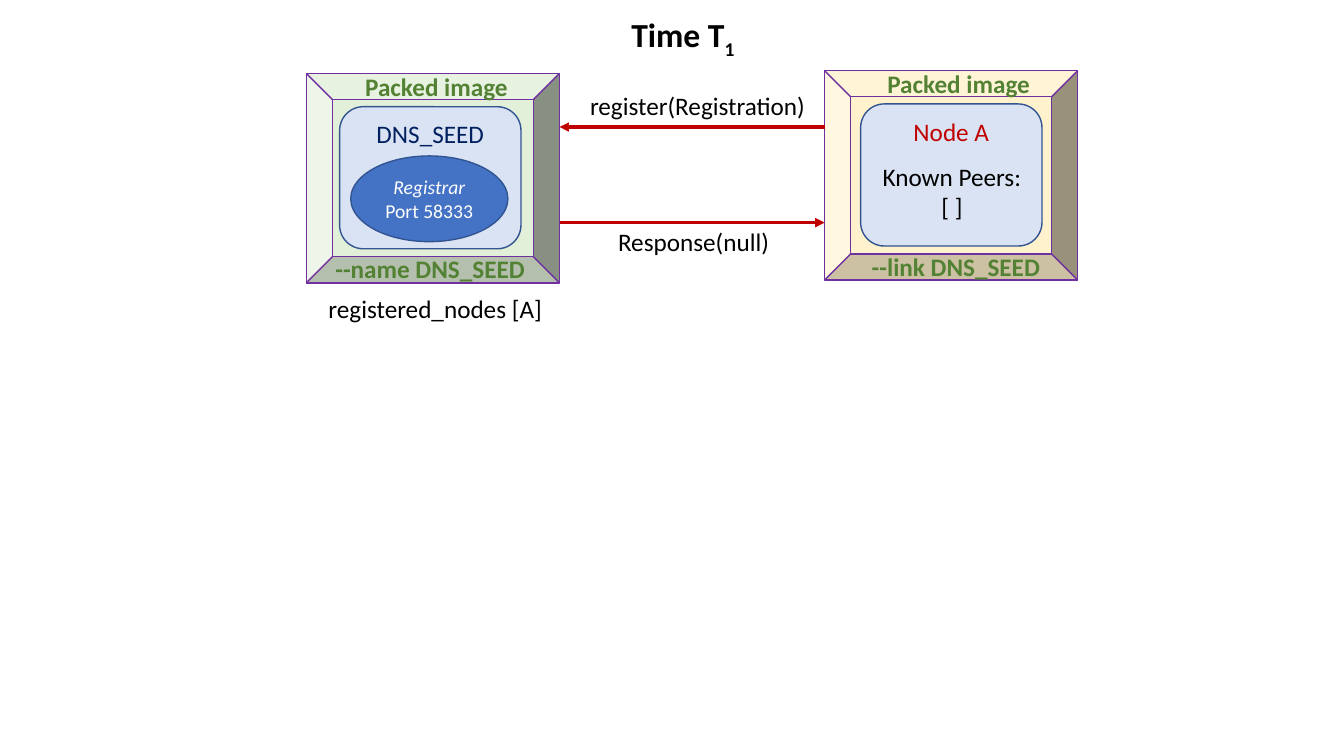
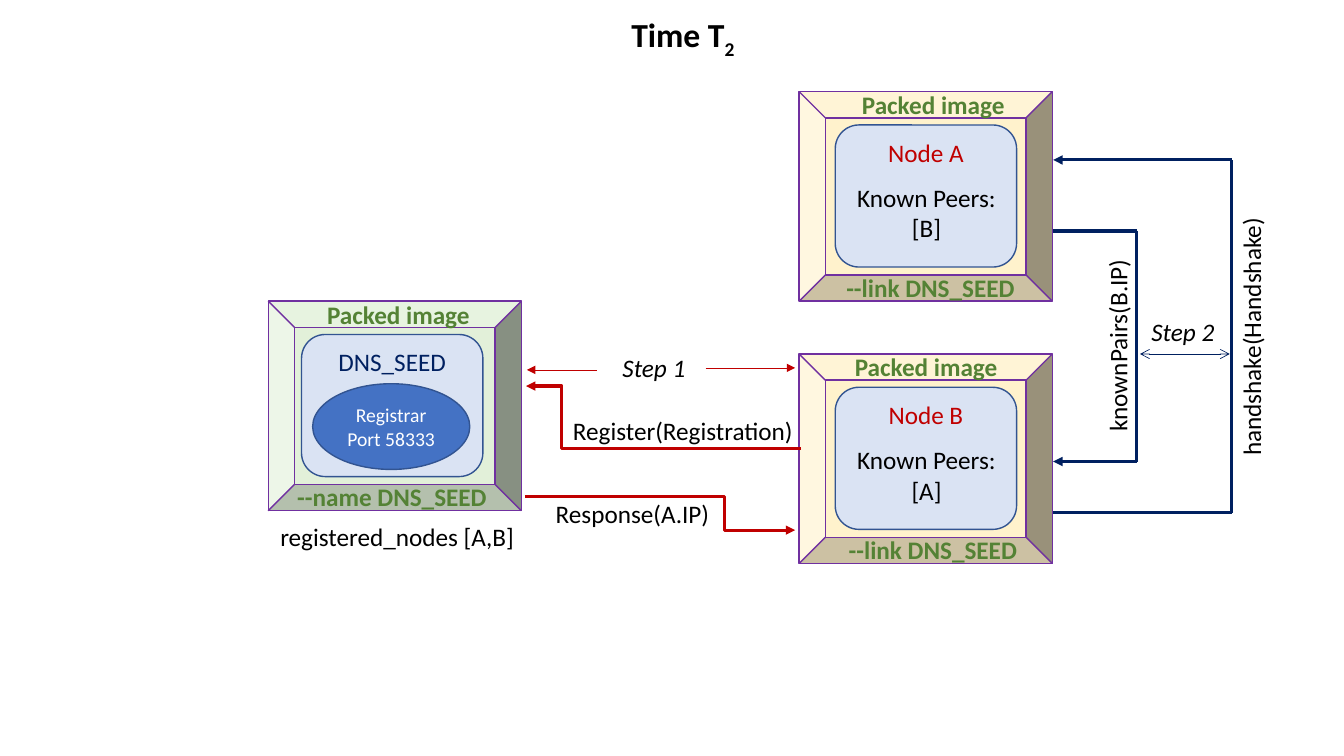
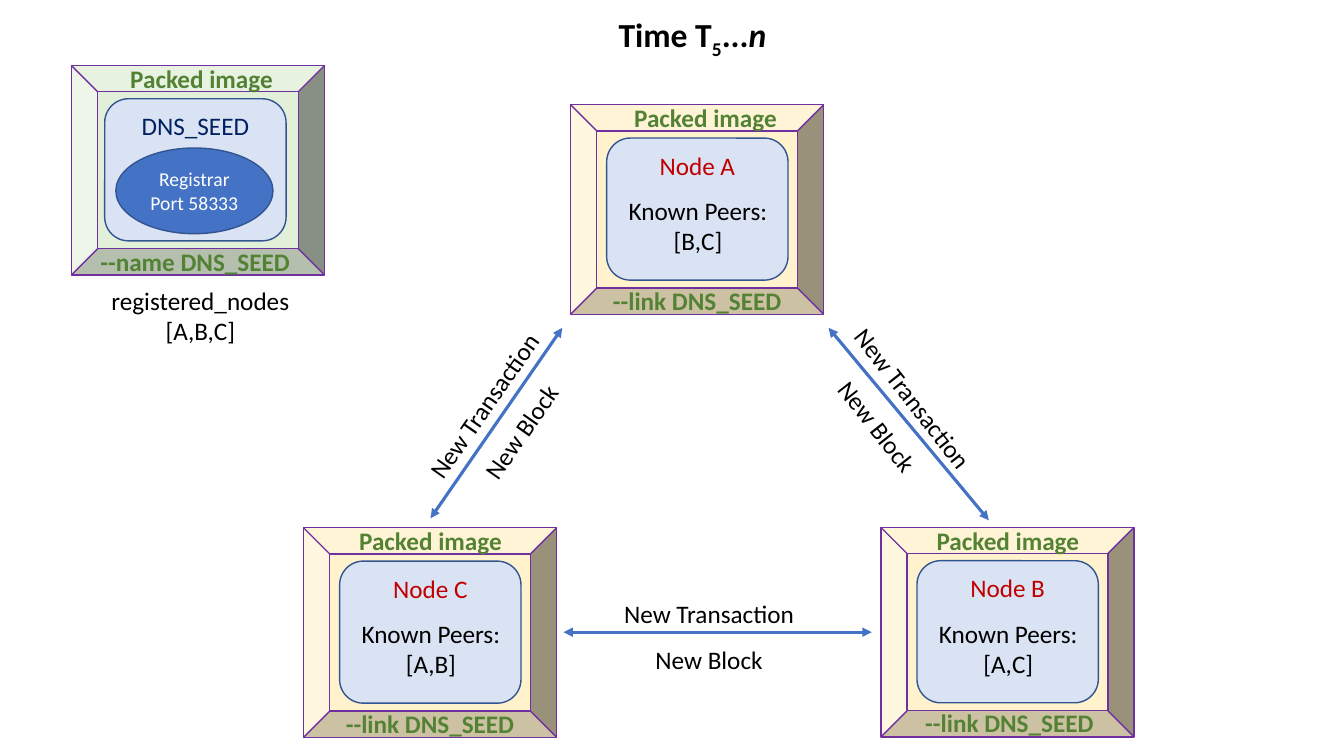
import lxml.etree
import pptx
import pptx.dml.color
import pptx.enum.shapes
import pptx.enum.text
import pptx.oxml.ns
import pptx.util

Cm, Pt = pptx.util.Cm, pptx.util.Pt
MSO = pptx.enum.shapes.MSO_SHAPE
CONN = pptx.enum.shapes.MSO_CONNECTOR
ANCHOR = pptx.enum.text.MSO_ANCHOR
CENTER = pptx.enum.text.PP_ALIGN.CENTER
rgb = pptx.dml.color.RGBColor.from_string
qn = pptx.oxml.ns.qn

FONT = "Calibri"
BLACK, WHITE, RED, NAVY, BLUE = "000000", "FFFFFF", "C00000", "002060", "4472C4"
GREEN, PURPLE, EDGE = "548235", "7030A0", "325491"
CREAM, MINT, PALE = "FFF2CC", "E2F0D9", "DAE3F3"

BOX_W, BOX_H = 6.38, 5.28
INNER_W, INNER_H = 4.57, 3.58
LABEL_H = 1.02
TAG = dict(bold=True, color=GREEN)
PAIR = dict(spacing=1.5)
PAIR_TEXT = "New Transaction\nNew Block"

# Nodes: name, peers, left, top, centre of upper tag, centre of lower tag.
# Lines: points, colour, width, head, tail, bend (share of an elbow's width).
# Labels: text, centre, top, width, rotation, format.
SLIDES = [
    dict(
        title=("1", ""), title_x=17.21,
        seed=(7.72, 1.85), registered="[A]", registrar_italic=True,
        nodes=[("A", "[ ]", 20.78, 1.78, 3.38, 3.31)],
        lines=[
            ([(20.78, 3.2), (14.1, 3.2)], RED, 2.25, None, "triangle", None),
            ([(14.1, 5.61), (20.78, 5.61)], RED, 2.25, None, "triangle", None),
        ],
        labels=[
            ("register(Registration)", 17.58, 2.16, 6, 0, {}),
            ("Response(null)", 17.48, 5.59, 4.4, 0, {}),
        ],
    ),
    dict(
        title=("2", ""), title_x=17.21,
        seed=(6.76, 7.59), registered="[A,B]", registrar_italic=False,
        nodes=[
            ("A", "[B]", 20.14, 2.31, 3.38, 3.31),
            ("B", "[A]", 20.14, 8.92, 3.2, 3.37),
        ],
        lines=[
            ([(17.78, 9.27), (20.04, 9.27)], RED, 0.5, None, "triangle", None),
            ([(15.04, 9.32), (13.28, 9.32)], RED, 0.5, None, "triangle", None),
            ([(26.54, 12.92), (31.04, 12.92), (31.04, 4.03), (26.54, 4.03)],
             NAVY, 2.25, None, "triangle", None),
            ([(26.54, 5.82), (28.65, 5.82), (28.65, 11.63), (26.54, 11.63)],
             NAVY, 2.25, None, "triangle", None),
            ([(20.19, 11.3), (13.26, 9.73)], RED, 2.25, None, "triangle", 0.87),
            ([(13.23, 12.52), (20.04, 13.36)], RED, 2.25, None, "triangle", 0.74),
            ([(28.73, 8.92), (30.99, 8.92)], NAVY, 0.5, "arrow", "arrow", None),
        ],
        labels=[
            ("Step 1", 16.48, 8.76, 2.13, 0, dict(italic=True)),
            ("Step 2", 29.81, 7.85, 2.13, 0, dict(italic=True)),
            ("handshake(Handshake)", 31.53, 7.98, 6.73, 270, {}),
            ("knownPairs(B.IP)", 28.16, 8.2, 4.9, 270, {}),
            ("Register(Registration)", 17.21, 10.34, 6.12, 0, {}),
            ("Response(A.IP)", 15.94, 12.42, 4.4, 0, {}),
        ],
    ),
    dict(
        title=("5", "n"), title_x=17.45,
        seed=(1.8, 1.65), registered="[A,B,C]", registrar_italic=False,
        nodes=[
            ("A", "[B,C]", 14.38, 2.64, 3.4, 3.19),
            ("B", "[A,C]", 22.2, 13.29, 3.2, 3.24),
            ("C", "[A,B]", 7.65, 13.3, 3.2, 3.19),
        ],
        lines=[
            ([(14.17, 8.26), (10.85, 13.06)], BLUE, 2.25, "triangle", "triangle", None),
            ([(20.88, 8.26), (24.92, 13.11)], BLUE, 2.25, "triangle", "triangle", None),
            ([(21.97, 15.93), (14.2, 15.93)], BLUE, 2.25, "triangle", "triangle", None),
        ],
        labels=[
            (PAIR_TEXT, 12.46, 9.19, 4.85, 305, PAIR),
            (PAIR_TEXT, 22.75, 9.02, 4.85, 51.9, PAIR),
            (PAIR_TEXT, 17.87, 14.58, 4.85, 0, PAIR),
        ],
    ),
]


def write(tf, text, size=18, color=BLACK, bold=False, italic=False,
          spacing=None, baseline=0, same_line=False):
    """Add centred paragraphs to tf, or runs to its last one if same_line."""
    for line in text.split("\n"):
        p = tf.paragraphs[-1]
        if p.runs and not same_line:
            p = tf.add_paragraph()
        p.alignment = CENTER
        if spacing:
            p.line_spacing = spacing
        r = p.add_run()
        r.text = line
        r.font.name, r.font.size = FONT, Pt(size)
        r.font.bold, r.font.italic = bold, italic
        r.font.color.rgb = rgb(color)
        if baseline:
            r.font._element.set("baseline", str(baseline * 1000))


def add_block(s, kind, x, y, w, h, fill, line):
    sp = s.shapes.add_shape(kind, Cm(x), Cm(y), Cm(w), Cm(h))
    sp.shadow.inherit = False
    sp.fill.solid()
    sp.fill.fore_color.rgb = rgb(fill)
    sp.line.color.rgb = rgb(line)
    sp.line.width = Pt(1)
    sp.text_frame.vertical_anchor = ANCHOR.TOP
    return sp


prs = pptx.Presentation()
prs.slide_width, prs.slide_height = Cm(33.87), Cm(19.05)

for data in SLIDES:
    s = prs.slides.add_slide(prs.slide_layouts[5])
    labels = list(data["labels"])

    title = s.shapes.title
    title.left, title.top = Cm(data["title_x"] - 2.5), Cm(0.3)
    title.width, title.height = Cm(5), Cm(1.28)
    tf = title.text_frame
    tf.word_wrap = False
    step, last = data["title"]
    write(tf, "Time T", size=24, bold=True)
    write(tf, step, size=24, bold=True, baseline=-25, same_line=True)
    if last:
        write(tf, "...", size=24, bold=True, same_line=True)
        write(tf, last, size=24, bold=True, italic=True, same_line=True)

    # Seed container
    x, y = data["seed"]
    add_block(s, MSO.BEVEL, x, y, BOX_W, BOX_H, MINT, PURPLE)
    sp = add_block(s, MSO.ROUNDED_RECTANGLE, x + 0.84, y + 0.84,
                   INNER_W, INNER_H, PALE, EDGE)
    write(sp.text_frame, "DNS_SEED", color=NAVY)
    sp = add_block(s, MSO.OVAL, x + 1.12, y + 2.08, 3.96, 2.16, BLUE, EDGE)
    tf = sp.text_frame
    tf.margin_left = tf.margin_right = 0
    tf.vertical_anchor = ANCHOR.MIDDLE
    write(tf, "Registrar", size=14, color=WHITE, italic=data["registrar_italic"])
    write(tf, "Port 58333", size=14, color=WHITE)
    labels += [
        ("Packed image", x + 3.28, y - 0.18, 4.11, 0, TAG),
        ("--name DNS_SEED", x + 3.12, y + 4.42, 5.33, 0, TAG),
        ("registered_nodes " + data["registered"], x + 3.25, y + 5.42, 6.5, 0, {}),
    ]

    # Node containers
    for name, peers, x, y, upper, lower in data["nodes"]:
        add_block(s, MSO.BEVEL, x, y, BOX_W, BOX_H, CREAM, PURPLE)
        sp = add_block(s, MSO.ROUNDED_RECTANGLE, x + 0.91, y + 0.84,
                       INNER_W, INNER_H, PALE, EDGE)
        write(sp.text_frame, "Node " + name, color=RED)
        labels += [
            ("Packed image", x + upper, y - 0.18, 4.11, 0, TAG),
            ("Known Peers:\n" + peers, x + 3.21, y + 2.16, 4.04, 0, {}),
            ("--link DNS_SEED", x + lower, y + 4.42, 4.8, 0, TAG),
        ]

    for points, color, width, head, tail, bend in data["lines"]:
        kind = CONN.ELBOW if bend else CONN.STRAIGHT
        for i, (start, end) in enumerate(zip(points, points[1:])):
            c = s.shapes.add_connector(kind, *map(Cm, start + end))
            c.line.color.rgb = rgb(color)
            c.line.width = Pt(width)
            spPr = c._element.spPr
            ln = spPr.find(qn("a:ln"))
            if head and i == 0:
                lxml.etree.SubElement(ln, qn("a:headEnd"), type=head)
            if tail and i == len(points) - 2:
                lxml.etree.SubElement(ln, qn("a:tailEnd"), type=tail)
            lxml.etree.SubElement(spPr, qn("a:effectLst"))
            if bend:
                av = spPr.find(qn("a:prstGeom")).get_or_add_avLst()
                lxml.etree.SubElement(av, qn("a:gd"), name="adj1",
                                      fmla=f"val {round(bend * 100000)}")

    for text, center, top, width, rotation, fmt in labels:
        height = LABEL_H
        if "\n" in text:
            height = 2.44 if "spacing" in fmt else 1.8
        sp = s.shapes.add_textbox(Cm(center - width / 2), Cm(top), Cm(width), Cm(height))
        sp.rotation = rotation
        sp.text_frame.word_wrap = False
        write(sp.text_frame, text, **fmt)

prs.save("out.pptx")
